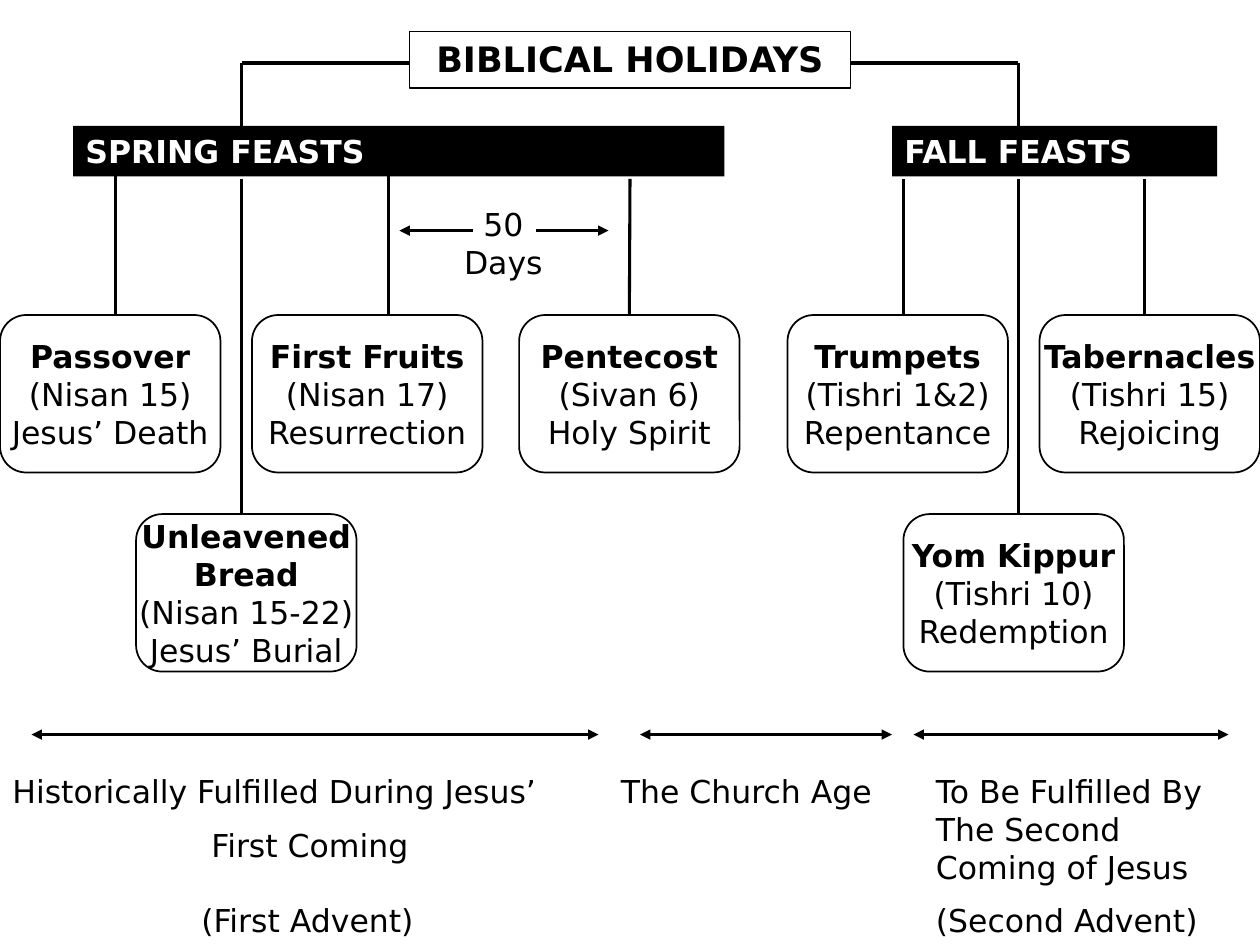
from dataclasses import dataclass
from typing import NamedTuple

from lxml.etree import SubElement
from pptx import Presentation
from pptx.dml.color import RGBColor
from pptx.enum.shapes import MSO_CONNECTOR as Link, MSO_SHAPE as Kind
from pptx.enum.text import MSO_ANCHOR as Anchor, MSO_AUTO_SIZE as Fit, PP_ALIGN as Align
from pptx.oxml.ns import qn
from pptx.util import Inches, Pt


@dataclass(frozen=True)
class Theme:
    font: str = "DejaVu Sans"
    ink: RGBColor = RGBColor(0, 0, 0)
    paper: RGBColor = RGBColor(255, 255, 255)
    head: int = 20
    text: int = 18
    gap: int = 9
    edge: float = 1
    rule: float = 1.75


class Bar(NamedTuple):
    left: float
    width: float
    text: str


class Feast(NamedTuple):
    left: float
    top: float
    name: list[str]
    facts: list[str]
    width: float = 1.75


class Note(NamedTuple):
    left: float
    top: float
    width: float
    height: float
    lines: list[tuple[str, Align]]


class Stem(NamedTuple):
    x: float
    top: float
    end: float


class Span(NamedTuple):
    left: float
    mid: float
    right: float


THEME = Theme()
UPPER, LOWER = 2.5, 4.08  # tops of the two rows of feasts
AXIS = 5.83               # height of the time line

BARS = [Bar(0.58, 5.17, "SPRING FEASTS"), Bar(7.08, 2.58, "FALL FEASTS")]

FEASTS = [
    Feast(0, UPPER, ["Passover"], ["(Nisan 15)", "Jesus’ Death"]),
    Feast(1.08, LOWER, ["Unleavened", "Bread"], ["(Nisan 15-22)", "Jesus’ Burial"]),
    Feast(2, UPPER, ["First Fruits"], ["(Nisan 17)", "Resurrection"], 1.83),
    Feast(4.12, UPPER, ["Pentecost"], ["(Sivan 6)", "Holy Spirit"]),
    Feast(6.25, UPPER, ["Trumpets"], ["(Tishri 1&2)", "Repentance"]),
    Feast(8.25, UPPER, ["Tabernacles"], ["(Tishri 15)", "Rejoicing"]),
    Feast(7.17, LOWER, ["Yom Kippur"], ["(Tishri 10)", "Redemption"]),
]

STEMS = [
    Stem(1.92, 0.5, 1.08), Stem(8.08, 0.5, 1),
    Stem(0.92, 1.33, UPPER), Stem(1.92, 1.42, LOWER), Stem(3.08, 1.33, UPPER),
    Stem(7.17, 1.42, UPPER), Stem(8.08, 1.42, LOWER), Stem(9.08, 1.42, UPPER),
]

SPANS = [Span(0.25, 1.83, 4.75), Span(5.08, 6.42, 7.08), Span(7.25, 8.67, 9.75)]

NOTES = [
    Note(3.58, 1.58, 0.83, 0.7, [("50 Days", Align.CENTER)]),
    Note(0, 6.08, 4.92, 0.85, [("Historically Fulfilled During Jesus’", Align.LEFT),
                               ("First Coming", Align.CENTER)]),
    Note(4.83, 6.08, 2.33, 0.4, [("The Church Age", Align.LEFT)]),
    Note(7.33, 6.08, 2.42, 1.45, [("To Be Fulfilled By The Second Coming of Jesus", Align.LEFT),
                                  ("(Second Advent)", Align.LEFT)]),
    Note(1.5, 7.1, 2.58, 0.4, [("(First Advent)", Align.LEFT)]),
]


def place(left: float, top: float, width: float, height: float) -> list[Inches]:
    return [Inches(v) for v in (left, top, width, height)]


def write(frame, index: int, text: str, align: Align, bold: bool = False,
          size: int = THEME.text, color: RGBColor = THEME.ink, gap: int = 0) -> None:
    para = frame.add_paragraph() if index else frame.paragraphs[0]
    para.alignment = align
    if index:
        para.space_before = Pt(gap)
    run = para.add_run()
    run.text = text
    font = run.font
    font.name, font.size, font.bold = THEME.font, Pt(size), bold
    font.color.rgb = color


def paint(shape, fill: RGBColor, edge: bool) -> None:
    shape.fill.solid()
    shape.fill.fore_color.rgb = fill
    if edge:
        shape.line.color.rgb = THEME.ink
        shape.line.width = Pt(THEME.edge)
    else:
        shape.line.fill.background()


def draw_title(slide, text: str) -> None:
    title = slide.shapes.title
    title.left, title.top, title.width, title.height = place(3.25, 0.25, 3.5, 0.45)
    paint(title, THEME.paper, True)
    frame = title.text_frame
    frame.auto_size = Fit.NONE
    frame.vertical_anchor = Anchor.TOP
    write(frame, 0, text, Align.CENTER, True, THEME.head)


def draw_bar(slide, bar: Bar) -> None:
    shape = slide.shapes.add_shape(Kind.RECTANGLE, *place(bar.left, 1, bar.width, 0.4))
    shape.shadow.inherit = False
    paint(shape, THEME.ink, False)
    shape.text_frame.vertical_anchor = Anchor.TOP
    write(shape.text_frame, 0, bar.text, Align.LEFT, True, color=THEME.paper)


def draw_feast(slide, feast: Feast):
    shape = slide.shapes.add_shape(Kind.FLOWCHART_ALTERNATE_PROCESS,
                                   *place(feast.left, feast.top, feast.width, 1.25))
    shape.shadow.inherit = False
    paint(shape, THEME.paper, True)
    frame = shape.text_frame
    frame.word_wrap = False
    frame.vertical_anchor = Anchor.MIDDLE
    for i, text in enumerate(feast.name + feast.facts):
        write(frame, i, text, Align.CENTER, i < len(feast.name))
    return shape


def draw_note(slide, note: Note) -> None:
    box = slide.shapes.add_textbox(*place(*note[:4]))
    box.text_frame.word_wrap = True
    for i, (text, align) in enumerate(note.lines):
        write(box.text_frame, i, text, align, gap=THEME.gap)


def draw_line(slide, x1: float, y1: float, x2: float, y2: float, arrow: bool = False):
    line = slide.shapes.add_connector(Link.STRAIGHT, *place(x1, y1, x2, y2))
    line.line.color.rgb = THEME.ink
    line.line.width = Pt(THEME.rule)
    if arrow:
        SubElement(line.line._get_or_add_ln(), qn("a:tailEnd"), type="triangle")
    SubElement(line._element.spPr, qn("a:effectLst"))
    return line


def main() -> None:
    deck = Presentation()
    deck.slide_width, deck.slide_height = Inches(10), Inches(7.5)
    slide = deck.slides.add_slide(deck.slide_layouts[5])

    # Heading, its two arms and the season bars
    draw_title(slide, "BIBLICAL HOLIDAYS")
    for start, end in ((1.92, 3.25), (6.75, 8.08)):
        draw_line(slide, start, 0.5, end, 0.5)
    for bar in BARS:
        draw_bar(slide, bar)

    # Feasts and the stems they hang from
    boxes = {feast.name[0]: draw_feast(slide, feast) for feast in FEASTS}
    for stem in STEMS:
        draw_line(slide, stem.x, stem.top, stem.x, stem.end)
    draw_line(slide, 5, 1.42, 5, UPPER).end_connect(boxes["Pentecost"], 0)

    # Notes, the fifty days and the time line
    for note in NOTES:
        draw_note(slide, note)
    for start, end in ((3.75, 3.17), (4.25, 4.83)):
        draw_line(slide, start, 1.83, end, 1.83, True)
    for span in SPANS:
        for end in (span.left, span.right):
            draw_line(slide, span.mid, AXIS, end, AXIS, True)

    deck.save("out.pptx")


if __name__ == "__main__":
    main()
